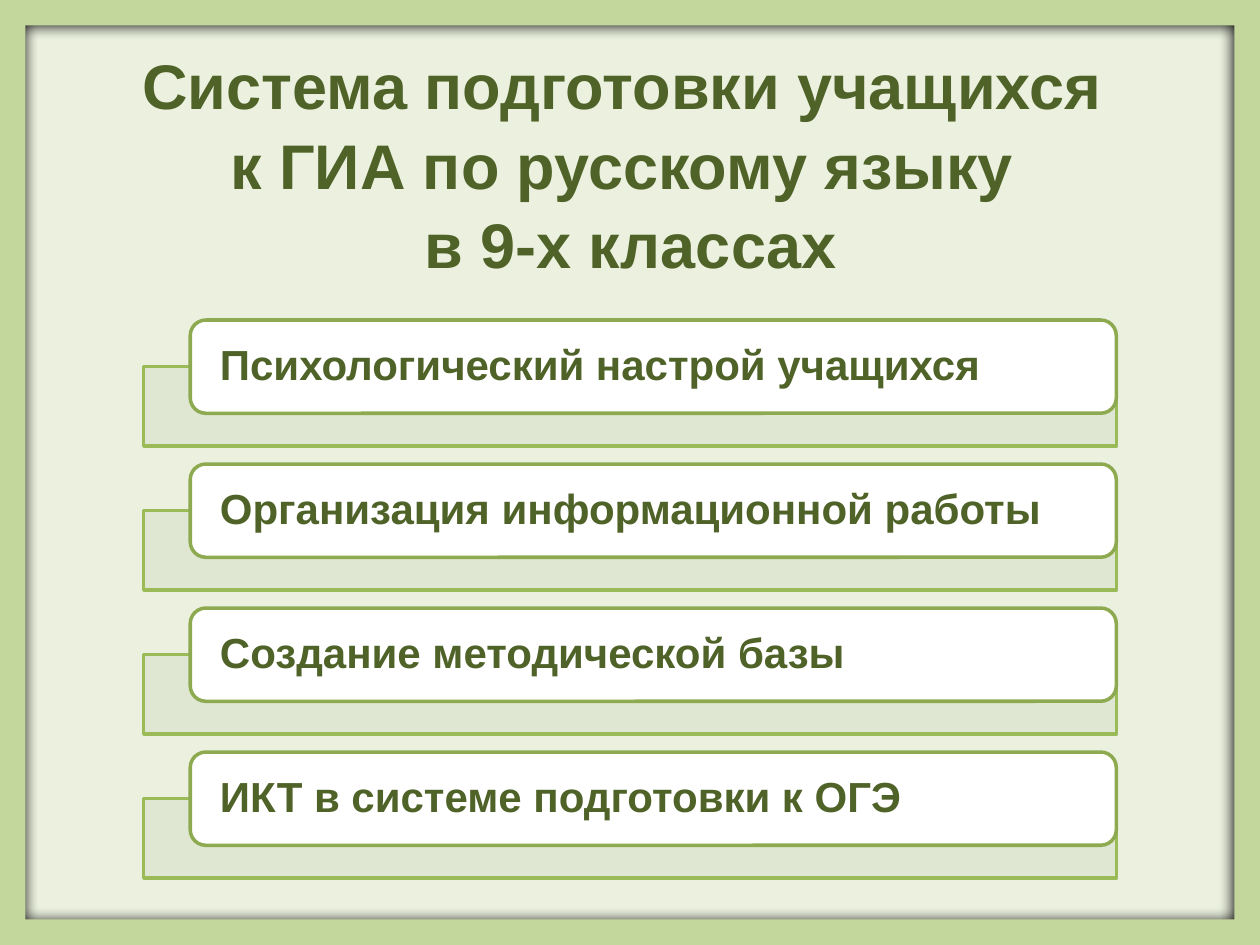
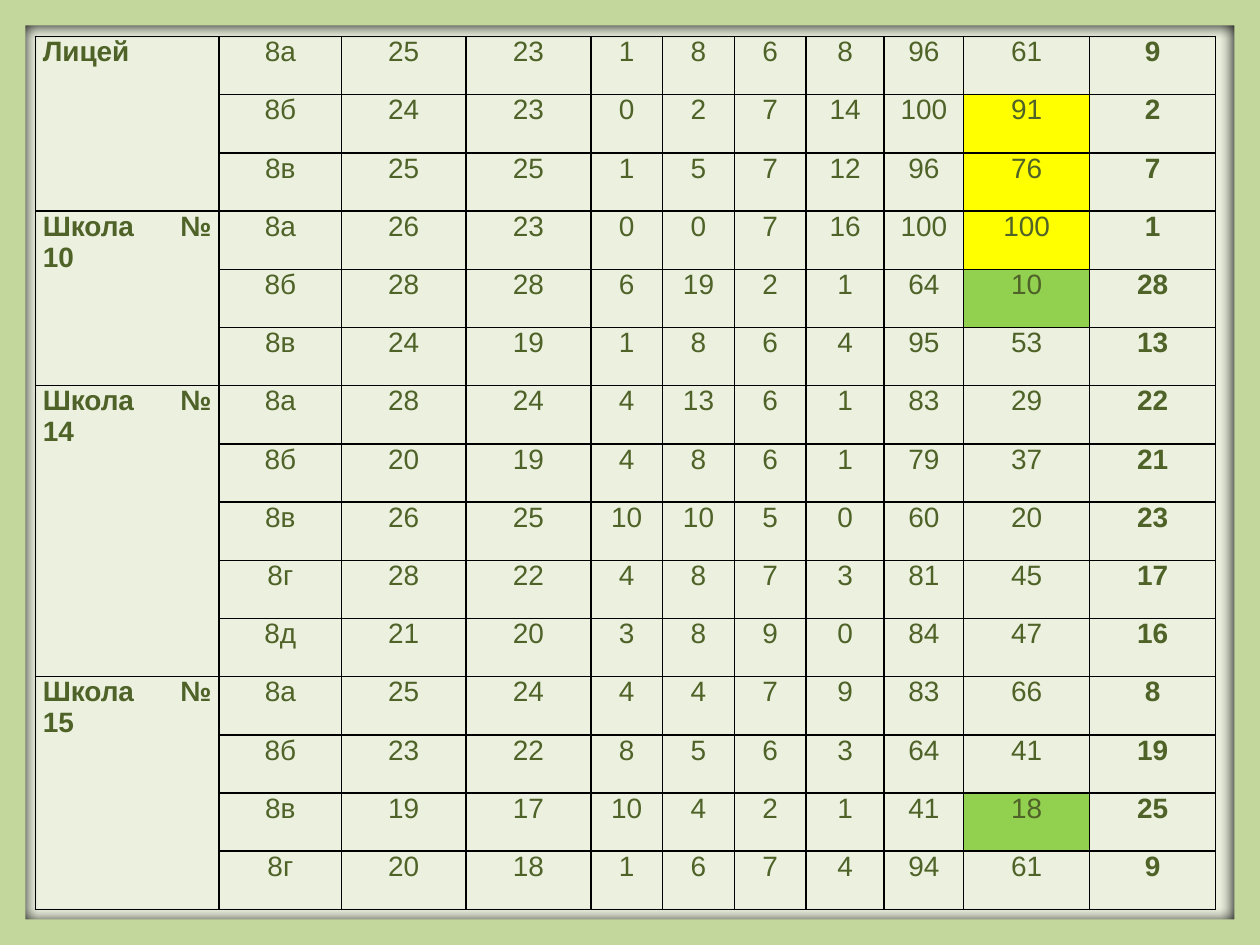
import pptx
import pptx.dml.color
import pptx.enum.shapes
import pptx.enum.text
import pptx.oxml
import pptx.oxml.ns
import pptx.util
from pptx.util import Inches

ALIGN = pptx.enum.text.PP_ALIGN
ANCHOR = pptx.enum.text.MSO_ANCHOR
SHAPE = pptx.enum.shapes.MSO_SHAPE

BACKGROUND, FRAME, TEXT = "EBF1DE", "C3D69B", "4F6228"
TRAY, TRAY_LINE = "DEE7D1", "9BBB59"
CARD, CARD_LINE = "FFFFFF", "8DAA51"
HIGH, LOW, GRID = "FFFF00", "92D050", "000000"

TITLE_LINES = ["Система подготовки учащихся ", "к ГИА по русскому языку ", "в 9-х классах"]
DIRECTIONS = [
    "Психологический настрой учащихся",
    "Организация информационной работы",
    "Создание методической базы",
    "ИКТ в системе подготовки к ОГЭ",
]
COLUMN_WIDTHS = [1.46, 0.97, 0.99, 0.99, 0.57, 0.57, 0.57, 0.62, 0.63, 1, 1]
ROW_HEIGHT = 0.462
QUALITY_COLUMN, RANK_COLUMN = 9, 10
RESULTS = {
    "Лицей": [
        "8а 25 23 1 8 6 8 96 61 9",
        "8б 24 23 0 2 7 14 100 91 2",
        "8в 25 25 1 5 7 12 96 76 7",
    ],
    "Школа № 10": [
        "8а 26 23 0 0 7 16 100 100 1",
        "8б 28 28 6 19 2 1 64 10 28",
        "8в 24 19 1 8 6 4 95 53 13",
    ],
    "Школа № 14": [
        "8а 28 24 4 13 6 1 83 29 22",
        "8б 20 19 4 8 6 1 79 37 21",
        "8в 26 25 10 10 5 0 60 20 23",
        "8г 28 22 4 8 7 3 81 45 17",
        "8д 21 20 3 8 9 0 84 47 16",
    ],
    "Школа № 15": [
        "8а 25 24 4 4 7 9 83 66 8",
        "8б 23 22 8 5 6 3 64 41 19",
        "8в 19 17 10 4 2 1 41 18 25",
        "8г 20 18 1 6 7 4 94 61 9",
    ],
}


def rgb(value):
    return pptx.dml.color.RGBColor.from_string(value)


def apply(target, formats):
    for name, value in formats.items():
        setattr(target, name, value)


def write(frame, lines, size, bold=True, **paragraph_format):
    frame.text = "\n".join(lines)
    for paragraph in frame.paragraphs:
        apply(paragraph, paragraph_format)
        for run in paragraph.runs:
            apply(run.font, {"name": "Arial", "size": pptx.util.Pt(size), "bold": bold})
            run.font.color.rgb = rgb(TEXT)


def xml(text):
    head, tail = text.split(">", 1) if "/>" not in text.split(">")[0] + ">" else (text[:-2], None)
    namespace = " " + pptx.oxml.ns.nsdecls("a")
    return pptx.oxml.parse_xml(head + namespace + ("/>" if tail is None else ">" + tail))


def add_block(slide, preset, box, fill, line=None):
    block = slide.shapes.add_shape(preset, *(Inches(length) for length in box))
    block.shadow.inherit = False
    block.fill.solid()
    block.fill.fore_color.rgb = rgb(fill)
    if line:
        block.line.color.rgb = rgb(line)
        block.line.width = pptx.util.Pt(2)
    else:
        block.line.fill.background()
    return block


# Shared background and frame with its soft shadow
def add_framed_slide(deck, layout):
    slide = deck.slides.add_slide(deck.slide_layouts[layout])
    slide.background.fill.solid()
    slide.background.fill.fore_color.rgb = rgb(BACKGROUND)
    border = add_block(slide, SHAPE.FRAME, (0, 0, 10, 7.5), FRAME)
    border.adjustments[0] = 0.027
    effects = border._element.spPr.find(pptx.oxml.ns.qn("a:effectLst"))
    effects.append(xml(
        f'<a:outerShdw blurRad="{pptx.util.Pt(8.5)}" dist="{pptx.util.Pt(1)}" dir="5400000" '
        'algn="t" rotWithShape="0"><a:srgbClr val="000000"/></a:outerShdw>'))
    slide.shapes._spTree.insert(2, border._element)
    return slide


def place_title(slide, box):
    title = slide.shapes.title
    apply(title, dict(zip(("left", "top", "width", "height"), map(Inches, box))))
    apply(title.text_frame, {
        "word_wrap": True, "vertical_anchor": ANCHOR.TOP,
        "auto_size": pptx.enum.text.MSO_AUTO_SIZE.NONE})
    write(title.text_frame, TITLE_LINES, 36, alignment=ALIGN.CENTER, line_spacing=1.05)


# One card overlapping the tray behind it
def add_direction(slide, box, label):
    left, top, width, height = box
    tray = add_block(slide, SHAPE.RECTANGLE, (left, top + 0.37, width, height - 0.37),
                     TRAY, TRAY_LINE)
    tray.fill._xPr.find(".//" + pptx.oxml.ns.qn("a:srgbClr")).append(xml('<a:alpha val="90000"/>'))
    card = add_block(slide, SHAPE.ROUNDED_RECTANGLE, (left + 0.37, top, width - 0.37, 0.74),
                     CARD, CARD_LINE)
    apply(card.text_frame, {
        "word_wrap": True, "vertical_anchor": ANCHOR.MIDDLE,
        "margin_left": Inches(0.2), "margin_right": Inches(0.2),
        "margin_top": 0, "margin_bottom": 0})
    write(card.text_frame, [label], 24, alignment=ALIGN.LEFT, line_spacing=0.9)


def build_directions_slide(deck):
    slide = add_framed_slide(deck, 5)
    place_title(slide, (0.28, 0.29, 9.45, 3.13))
    for index, label in enumerate(DIRECTIONS):
        add_direction(slide, (1.14, 2.54 + index * 1.143, 7.72, 1), label)


def format_cell(cell, fill=None):
    apply(cell, {"margin_left": Inches(0.06), "margin_right": Inches(0.06),
                 "margin_top": 0, "margin_bottom": 0, "vertical_anchor": ANCHOR.TOP})
    properties = cell._tc.get_or_add_tcPr()
    for side in "LRTB":
        properties.append(xml(
            f'<a:ln{side} w="{pptx.util.Pt(1)}"><a:solidFill><a:srgbClr val="{GRID}"/>'
            f'</a:solidFill></a:ln{side}>'))
    if fill:
        cell.fill.solid()
        cell.fill.fore_color.rgb = rgb(fill)
    else:
        cell.fill.background()


def quality_fill(quality):
    return HIGH if quality > 70 else LOW if quality < 20 else None


# Results by school and class
def add_results(slide, left, top):
    row_count = sum(len(classes) for classes in RESULTS.values())
    results = slide.shapes.add_table(
        row_count, len(COLUMN_WIDTHS), Inches(left), Inches(top),
        Inches(sum(COLUMN_WIDTHS)), Inches(row_count * ROW_HEIGHT)).table
    apply(results, {"first_row": False, "horz_banding": False})
    for column, width in zip(results.columns, COLUMN_WIDTHS):
        column.width = Inches(width)
    for row in results.rows:
        row.height = Inches(ROW_HEIGHT)

    first = 0
    for school, classes in RESULTS.items():
        for row, line in enumerate(classes, first):
            format_cell(results.cell(row, 0))
            for column, value in enumerate(line.split(), 1):
                cell = results.cell(row, column)
                format_cell(cell, quality_fill(int(value)) if column == QUALITY_COLUMN else None)
                write(cell.text_frame, [value], 16, column == RANK_COLUMN, alignment=ALIGN.CENTER)
        name = results.cell(first, 0)
        name.merge(results.cell(first + len(classes) - 1, 0))
        write(name.text_frame, [school], 16, alignment=ALIGN.JUSTIFY)
        first += len(classes)


def build_results_slide(deck):
    add_results(add_framed_slide(deck, 6), 0.28, 0.29)


def main():
    deck = pptx.Presentation()
    apply(deck, {"slide_width": Inches(10), "slide_height": Inches(7.5)})
    build_directions_slide(deck)
    build_results_slide(deck)
    deck.save("out.pptx")


if __name__ == "__main__":
    main()
